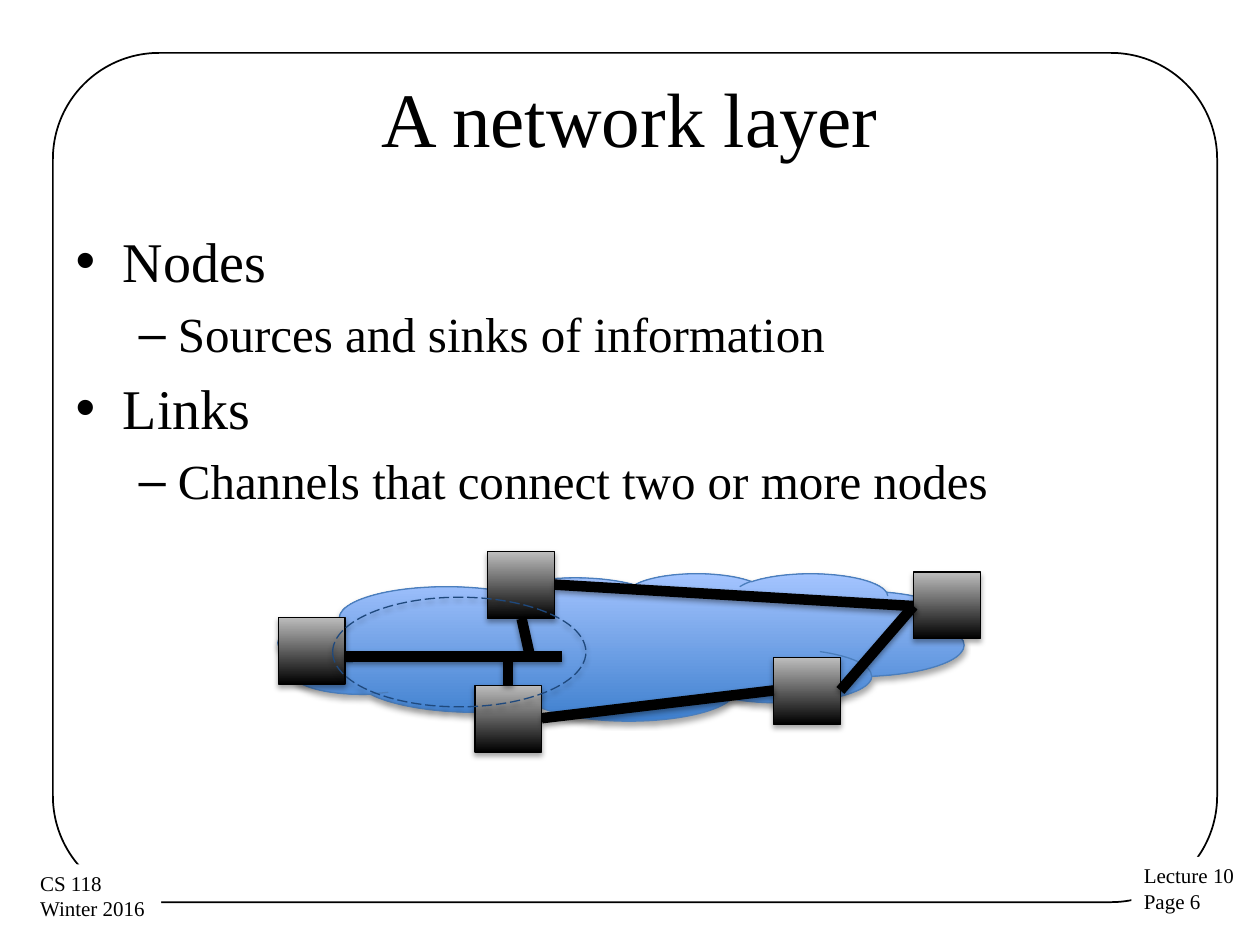
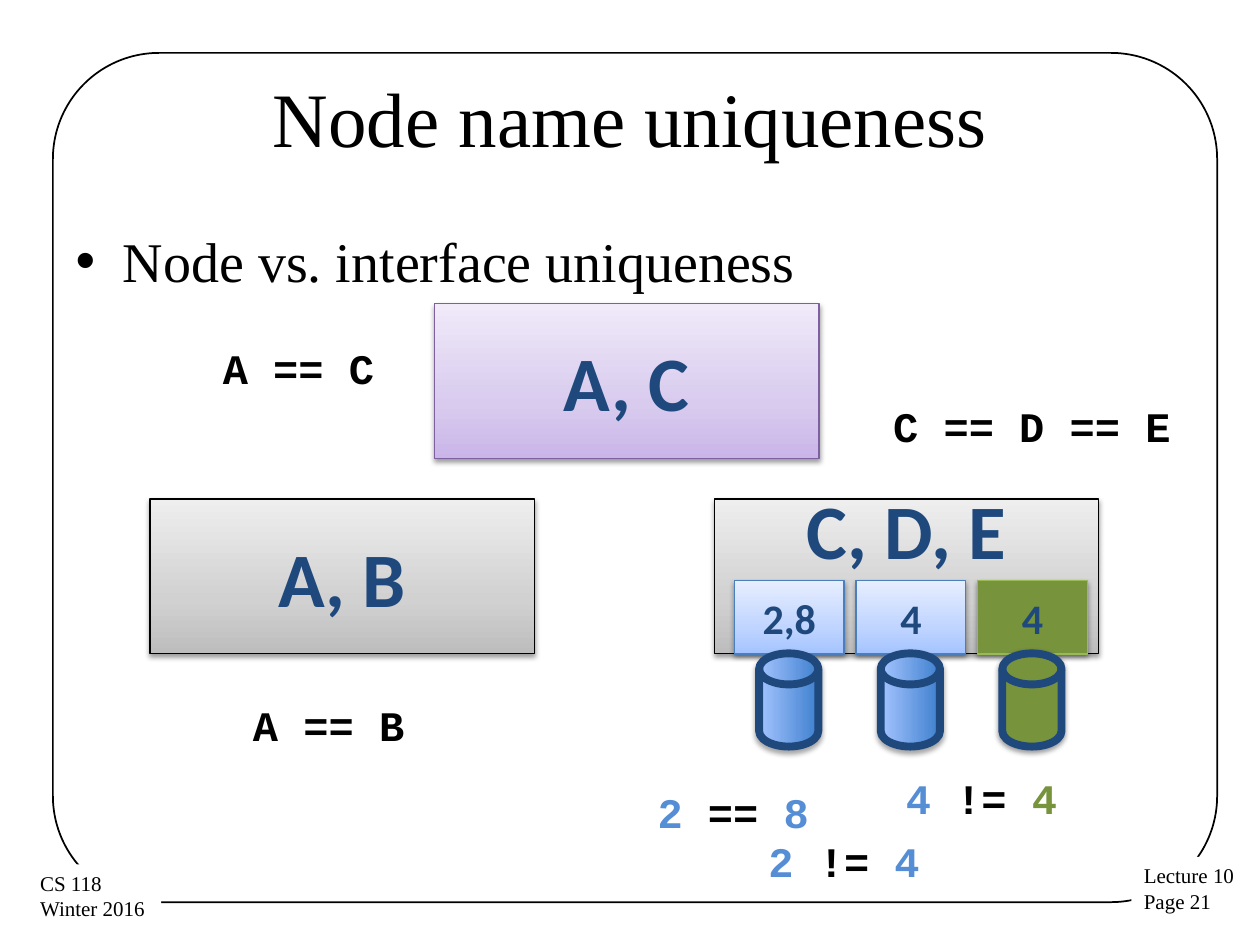
from dataclasses import dataclass
from lxml import etree
from pptx import Presentation
from pptx import util as u
from pptx.dml.color import RGBColor
from pptx.enum import dml, shapes, text
from pptx.oxml import parse_xml
from pptx.oxml.ns import nsdecls, qn


@dataclass(frozen=True)
class Theme:
    serif: str = "Times New Roman"
    sans: str = "Calibri"
    mono: str = "Courier New"
    black: str = "000000"
    white: str = "FFFFFF"
    navy: str = "1F497D"
    blue: str = "558ED5"
    edge: str = "4B7EBC"
    green: str = "77933C"
    lime: str = "98B955"
    plum: str = "7D60A0"
    sky: tuple = ((0, "3F80CE"), (100, "A4C4FF"))
    dark: tuple = ((0, "000000"), (100, "BDBDBD"))
    gray: tuple = ((0, "BDBDBD"), (35, "D1D1D1"), (100, "EEEEEE"))
    pale: tuple = ((0, "A4C4FF"), (35, "BFD4FF"), (100, "E6EEFF"))
    lilac: tuple = ((0, "C9B5E8"), (35, "D8CBEE"), (100, "F0EAF9"))
    deep: tuple = (35, 1.8)
    soft: tuple = (38, 1.6)
    head: int = 44
    body: tuple = (32, 28)
    code: int = 24
    foot: int = 12


T = Theme()
KIND = shapes.MSO_SHAPE
ALIGN = text.PP_ALIGN
MID = text.MSO_ANCHOR.MIDDLE


def write(frame, lines, size=None, font=T.serif, color=T.black, bold=False,
          align=ALIGN.LEFT, anchor=None, levels=None, grow=False):
    frame.word_wrap = not grow
    if grow:
        frame.auto_size = text.MSO_AUTO_SIZE.SHAPE_TO_FIT_TEXT
    if anchor is not None:
        frame.vertical_anchor = anchor
    for i, line in enumerate(lines):
        para = frame.paragraphs[0] if i == 0 else frame.add_paragraph()
        para.alignment = align
        if levels:
            para.level = levels[i]
        for word, tint in [(line, color)] if isinstance(line, str) else line:
            run = para.add_run()
            run.text = word
            run.font.size = u.Pt(size or T.body[para.level])
            run.font.name = font
            run.font.bold = bold
            run.font.color.rgb = RGBColor.from_string(tint)


def draw(page, kind, box, fill=None, line=None, width=0.75, shadow=None):
    box = [u.Inches(n) for n in box]
    if kind is shapes.MSO_CONNECTOR.STRAIGHT:
        item = page.shapes.add_connector(kind, *box)
    else:
        item = page.shapes.add_shape(kind, *box)
        item.shadow.inherit = False
        if isinstance(fill, tuple):
            stops = "".join(f'<a:gs pos="{p * 1000}"><a:srgbClr val="{c}"/></a:gs>' for p, c in fill)
            item.fill.background()
            old = item.element.spPr.find(qn("a:noFill"))
            item.element.spPr.replace(old, parse_xml(
                f'<a:gradFill {nsdecls("a")} rotWithShape="1"><a:gsLst>{stops}</a:gsLst>'
                '<a:lin ang="16200000" scaled="0"/></a:gradFill>'))
        elif fill:
            item.fill.solid()
            item.fill.fore_color.rgb = RGBColor.from_string(fill)
        else:
            item.fill.background()
    if line:
        item.line.color.rgb = RGBColor.from_string(line)
        item.line.width = u.Pt(width)
    else:
        item.line.fill.background()
    props = item.element.spPr
    glow = props.find(qn("a:effectLst"))
    if glow is None:
        glow = etree.SubElement(props, qn("a:effectLst"))
    if shadow:
        alpha, dist = shadow
        glow.append(parse_xml(
            f'<a:outerShdw {nsdecls("a")} blurRad="{u.Pt(3.1)}" dist="{u.Pt(dist)}" '
            f'dir="5400000" rotWithShape="0"><a:srgbClr val="{T.black}">'
            f'<a:alpha val="{alpha * 1000}"/></a:srgbClr></a:outerShdw>'))
    return item


deck = Presentation()
deck.slide_width, deck.slide_height = u.Inches(10), u.Inches(7.5)

pages = []
for name, num, items, levels in (
    ("A network layer", 6,
     ["Nodes", "Sources and sinks of information",
      "Links", "Channels that connect two or more nodes"], [0, 1, 0, 1]),
    ("Node name uniqueness", 21, ["Node vs. interface uniqueness"], [0]),
):
    page = deck.slides.add_slide(deck.slide_layouts[1])
    pages.append(page)
    title, body = page.placeholders
    border = draw(page, KIND.ROUNDED_RECTANGLE, (0.42, 0.42, 9.24, 6.74), line=T.black, width=1)
    border.adjustments[0] = 0.125
    for box, lines in (
        ((8.98, 6.8, 0.93, 0.51), ["Lecture 10", f"Page {num}"]),
        ((0.22, 6.86, 1.06, 0.51), ["CS 118", "Winter 2016"]),
    ):
        note = draw(page, KIND.RECTANGLE, box, T.white)
        write(note.text_frame, lines, T.foot, anchor=text.MSO_ANCHOR.TOP, grow=True)
    for hold, top, high in ((title, 0.3, 1.25), (body, 1.75, 4.95)):
        hold.left, hold.width = u.Inches(0.5), u.Inches(9)
        hold.top, hold.height = u.Inches(top), u.Inches(high)
        hold.element.getparent().append(hold.element)
    write(title.text_frame, [name], T.head, align=ALIGN.CENTER, anchor=MID)
    write(body.text_frame, items, levels=levels)

net, names = pages

draw(net, KIND.CLOUD, (2.21, 4.55, 5.44, 1.17), T.sky, T.edge, shadow=T.deep)
for x, y in ((2.21, 4.9), (3.87, 4.38), (3.77, 5.44), (6.14, 5.22), (7.25, 4.54)):
    draw(net, KIND.RECTANGLE, (x, y, 0.53, 0.53), T.dark, T.black, shadow=T.deep)
for ends in (
    (2.74, 5.21, 4.46, 5.21), (4.03, 5.22, 4.03, 5.44), (4.14, 4.91, 4.2, 5.18),
    (4.4, 4.64, 7.25, 4.81), (6.67, 5.48, 7.25, 4.81), (4.3, 5.7, 6.14, 5.48),
):
    draw(net, shapes.MSO_CONNECTOR.STRAIGHT, ends, line=T.black, width=6, shadow=T.soft)
ring = draw(net, KIND.OVAL, (2.64, 4.74, 2.01, 0.87), line=T.navy, shadow=T.deep)
ring.line.dash_style = dml.MSO_LINE.LONG_DASH

for label, x, y, fill, line in (
    ("A, B", 1.19, 3.96, T.gray, T.black),
    ("C, D, E", 5.67, 3.96, T.gray, T.black),
    ("A, C", 3.45, 2.41, T.lilac, T.plum),
):
    node = draw(names, KIND.RECTANGLE, (x, y, 3.05, 1.23), fill, line, shadow=T.soft)
    write(node.text_frame, [label], T.head, T.sans, T.navy, True, ALIGN.CENTER, MID)
    if label == "C, D, E":
        node.text_frame.margin_top, node.text_frame.margin_bottom = 0, u.Inches(0.75)

ports = (("2,8", T.pale, T.edge, T.sky, T.deep),
         ("4", T.pale, T.edge, T.sky, T.deep),
         ("4", T.green, T.lime, T.green, T.soft))
for i, (label, fill, line, core, shadow) in enumerate(ports):
    step = 0.965 * i
    port = draw(names, KIND.RECTANGLE, (5.83 + step, 4.61, 0.87, 0.58), fill, line, shadow=T.soft)
    write(port.text_frame, [label], T.code, T.sans, T.navy, True, ALIGN.CENTER, MID)
    drum = draw(names, KIND.FLOWCHART_DIRECT_ACCESS_STORAGE, (5.89 + step, 5.32, 0.74, 0.47),
                core, T.navy, 4.5, shadow)
    drum.rotation = 270

for x, y, wide, runs in (
    (1.91, 5.5, 1.43, "A == B"),
    (1.67, 2.67, 1.43, "A == C"),
    (6.99, 3.13, 2.42, "C == D == E"),
    (5.12, 6.19, 1.41, [("2 ", T.blue), ("==", T.black), (" 8", T.blue)]),
    (6, 6.58, 1.41, [("2", T.blue), (" != ", T.black), ("4", T.blue)]),
    (7.09, 6.08, 1.41, [("4", T.blue), (" != ", T.black), ("4", T.green)]),
):
    rule = names.shapes.add_textbox(*(u.Inches(n) for n in (x, y, wide, 0.5)))
    write(rule.text_frame, [runs], T.code, T.mono, bold=True, grow=True)

deck.save("out.pptx")
